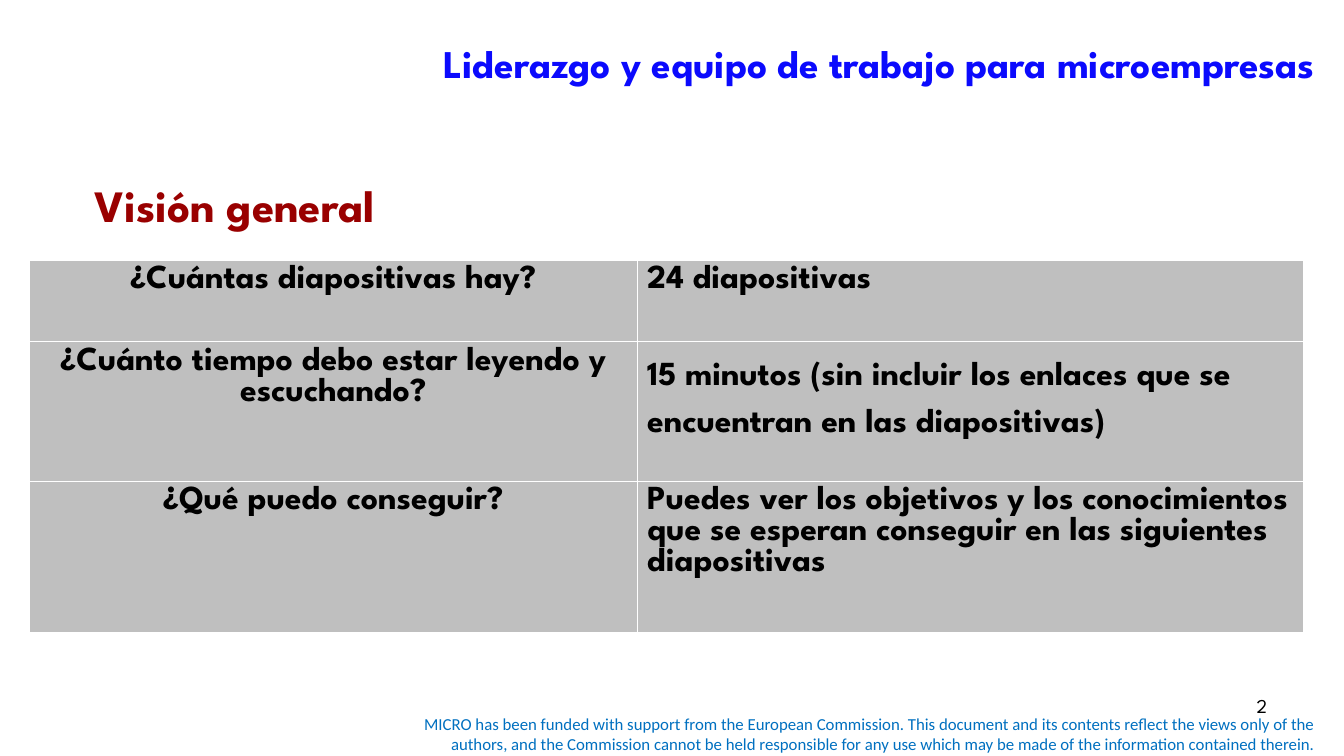
from lxml import etree
from pptx import Presentation
from pptx import util as u
from pptx.dml.color import RGBColor
from pptx.enum import text
from pptx.oxml import ns

# Content
COLORS = {"title": "0B0AFD", "heading": "990000", "body": "000000",
          "footer": "0070C0", "cell": "BFBFBF", "border": "FFFFFF"}
DISPLAY, PLAIN = "League Spartan", "Calibri"
LEFT, CENTER, RIGHT = text.PP_ALIGN.LEFT, text.PP_ALIGN.CENTER, text.PP_ALIGN.RIGHT
TOP, MIDDLE = text.MSO_ANCHOR.TOP, text.MSO_ANCHOR.MIDDLE

FOOTER = ("MICRO has been funded with support from the European Commission. "
          "This document and its contents reflect the views only of the authors, "
          "and the Commission cannot be held responsible for any use which may be "
          "made of the information contained therein.")

# words, (left, top, width, height), size, font, color, bold, alignment, anchor
TEXTS = [
    (FOOTER, (270, 506.2, 676.8, 36), 12, PLAIN, "footer", False, RIGHT, MIDDLE),
    ("Liderazgo y equipo de trabajo para microempresas", (82, 0, 864, 90),
     28, DISPLAY, "title", True, RIGHT, MIDDLE),
    ("2", (688.3, 491.8, 223.9, 37.4), 14, DISPLAY, "body", False, RIGHT, TOP),
    ("Visión general", (60.5, 123.1, 337, 46), 32, DISPLAY, "heading", True, LEFT, TOP),
]

# question, answer, line spacing of the answer, row height
ROWS = [
    ("¿Cuántas diapositivas hay?", "24 diapositivas", None, 58.3),
    ("¿Cuánto tiempo debo estar leyendo y escuchando?",
     "15 minutos (sin incluir los enlaces que se encuentran en las diapositivas)",
     1.5, 99.8),
    ("¿Qué puedo conseguir?",
     "Puedes ver los objetivos y los conocimientos que se esperan conseguir "
     "en las siguientes diapositivas", None, 108),
]
TABLE_LEFT, TABLE_TOP = 20.9, 185.8
COLUMNS = (434.2, 475.9)


def write(para, words, size, font, color, bold, align):
    para.text = words
    para.alignment = align
    para.font.size = u.Pt(size)
    para.font.name = font
    para.font.bold = bold
    para.font.color.rgb = RGBColor.from_string(COLORS[color])


def style_cell(cell):
    properties = cell._tc.get_or_add_tcPr()
    for side in ("a:lnL", "a:lnR", "a:lnT", "a:lnB"):
        line = etree.SubElement(properties, ns.qn(side), w=str(u.Pt(1)))
        fill = etree.SubElement(line, ns.qn("a:solidFill"))
        etree.SubElement(fill, ns.qn("a:srgbClr"), val=COLORS["border"])
    cell.fill.solid()
    cell.fill.fore_color.rgb = RGBColor.from_string(COLORS["cell"])


deck = Presentation()
deck.slide_width, deck.slide_height = u.Pt(960), u.Pt(540)
page = deck.slides.add_slide(deck.slide_layouts[6])

# Title, heading, page number and footer
for words, place, size, font, color, bold, align, anchor in TEXTS:
    box = page.shapes.add_textbox(*map(u.Pt, place))
    box.text_frame.word_wrap = True
    box.text_frame.vertical_anchor = anchor
    write(box.text_frame.paragraphs[0], words, size, font, color, bold, align)

# Overview table
height = sum(row[-1] for row in ROWS)
table = page.shapes.add_table(len(ROWS), len(COLUMNS), u.Pt(TABLE_LEFT), u.Pt(TABLE_TOP),
                              u.Pt(sum(COLUMNS)), u.Pt(height)).table
table.first_row = table.horz_banding = False
for column, width in zip(table.columns, COLUMNS):
    column.width = u.Pt(width)
for r, (question, answer, spacing, row_height) in enumerate(ROWS):
    table.rows[r].height = u.Pt(row_height)
    for c, (words, align) in enumerate([(question, CENTER), (answer, LEFT)]):
        cell = table.cell(r, c)
        style_cell(cell)
        write(cell.text_frame.paragraphs[0], words, 24, DISPLAY, "body", True, align)
    if spacing:
        table.cell(r, 1).text_frame.paragraphs[0].line_spacing = spacing

deck.save("out.pptx")
